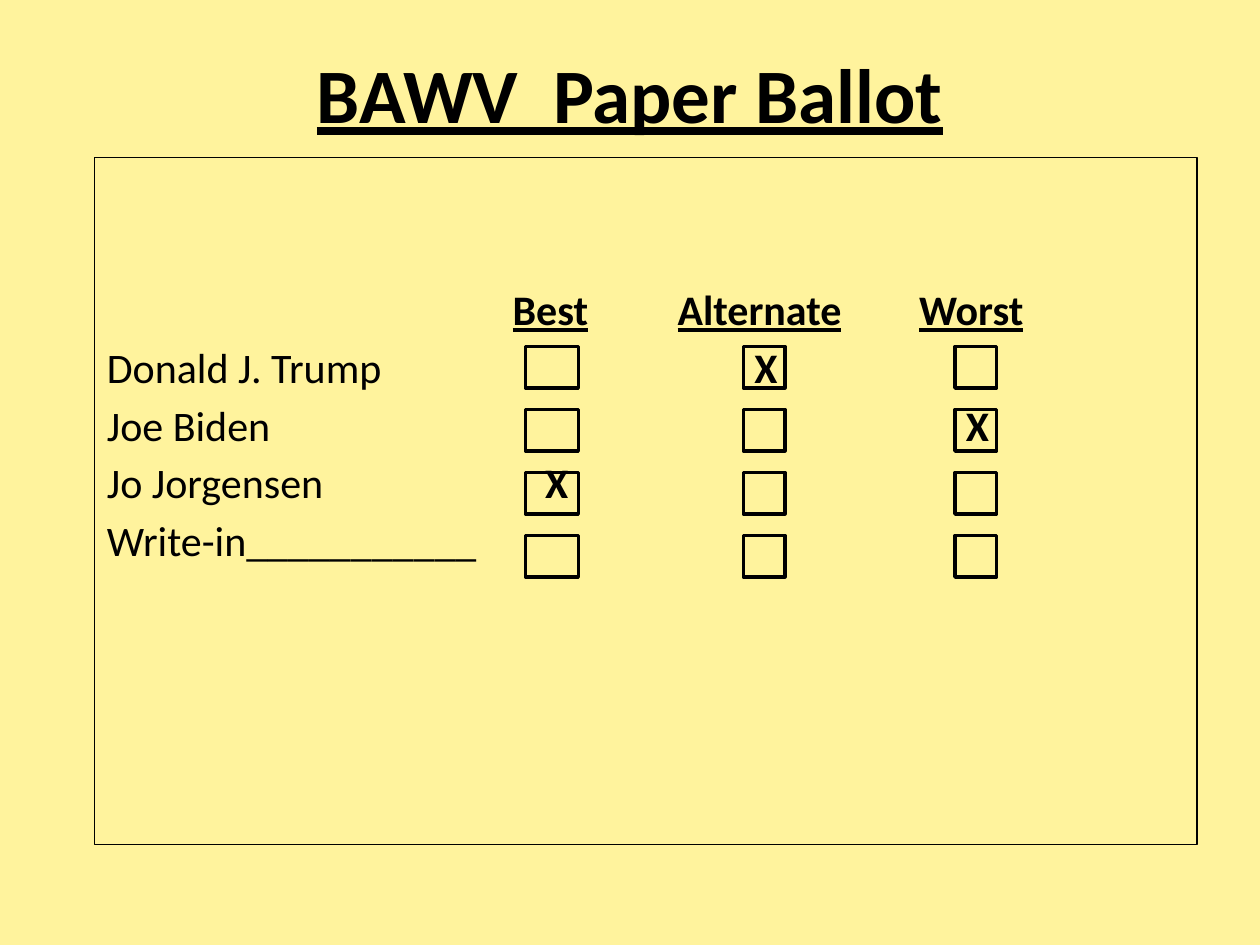
from lxml.etree import SubElement
from pptx import Presentation
from pptx.dml.color import RGBColor
from pptx.enum.shapes import MSO_SHAPE
from pptx.enum.text import MSO_ANCHOR, PP_ALIGN
from pptx.oxml.ns import qn
from pptx.util import Inches, Pt

BLACK, PAPER = "000000", "FFF39D"
# heading, box left, box width, heading centre measured from the text edge
COLUMNS = [
    ("Best", 4.17, 0.42, 3.52),
    ("Alternate", 5.9, 0.33, 5.18),
    ("Worst", 7.58, 0.33, 6.86),
]
# candidate, marked column
CANDIDATES = [
    ("Donald J. Trump", 2),
    ("Joe Biden", 3),
    ("Jo Jorgensen", 1),
    ("Write-in___________", 0),
]
MARK_SHIFT = 0.05
PLAIN = {"name": "Calibri", "size": Pt(24), "bold": False, "underline": False}
MARK = PLAIN | {"bold": True}
HEADING = MARK | {"underline": True}
TITLE = HEADING | {"size": Pt(44)}


def color(value):
    return RGBColor.from_string(value)


def set_line(shape, width):
    shape.line.color.rgb = color(BLACK)
    shape.line.width = Pt(width)


def add_run(paragraph, text, font_format):
    run = paragraph.add_run()
    run.text = text
    run.font.color.rgb = color(BLACK)
    for name, value in font_format.items():
        setattr(run.font, name, value)


def add_centre_tabs(paragraph, positions):
    tabs = SubElement(paragraph._p.get_or_add_pPr(), qn("a:tabLst"))
    for position in positions:
        SubElement(tabs, qn("a:tab"), pos=str(Inches(position)), algn="ctr")


def add_text_frame(slide, left, top, width, height):
    shape = slide.shapes.add_textbox(*map(Inches, (left, top, width, height)))
    shape.text_frame.word_wrap = True
    return shape, shape.text_frame


def add_title(slide, *box):
    _, frame = add_text_frame(slide, *box)
    frame.vertical_anchor = MSO_ANCHOR.MIDDLE
    paragraph = frame.paragraphs[0]
    paragraph.alignment = PP_ALIGN.CENTER
    add_run(paragraph, "BAWV  Paper Ballot", TITLE)


def add_ballot(slide, *box):
    """Framed list: a heading line, then one line per candidate."""
    shape, frame = add_text_frame(slide, *box)
    set_line(shape, 0.75)
    frame.margin_top = Inches(1)
    centres = [column[3] for column in COLUMNS]

    header = frame.paragraphs[0]
    add_centre_tabs(header, centres)
    for heading, *_ in COLUMNS:
        add_run(header, "\t", PLAIN)
        add_run(header, heading, HEADING)

    for candidate, marked in CANDIDATES:
        paragraph = frame.add_paragraph()
        paragraph.space_before = Pt(4.2)
        add_centre_tabs(paragraph, [centre + MARK_SHIFT for centre in centres])
        add_run(paragraph, candidate + "\t" * marked, PLAIN)
        if marked:
            add_run(paragraph, "X", MARK)


def add_check_boxes(slide, top, pitch, height):
    for row in range(len(CANDIDATES)):
        for _, left, width, _ in COLUMNS:
            box = slide.shapes.add_shape(
                MSO_SHAPE.RECTANGLE,
                *map(Inches, (left, top + row * pitch, width, height)))
            box.shadow.inherit = False
            box.fill.background()
            set_line(box, 2)


def main():
    presentation = Presentation()
    presentation.slide_width = Inches(10)
    presentation.slide_height = Inches(7.5)
    slide = presentation.slides.add_slide(presentation.slide_layouts[6])
    slide.background.fill.solid()
    slide.background.fill.fore_color.rgb = color(PAPER)
    add_title(slide, 0.5, 0.3, 9, 0.87)
    add_ballot(slide, 0.75, 1.25, 8.75, 5.45)
    add_check_boxes(slide, top=2.75, pitch=0.5, height=0.33)
    presentation.save("out.pptx")


if __name__ == "__main__":
    main()
